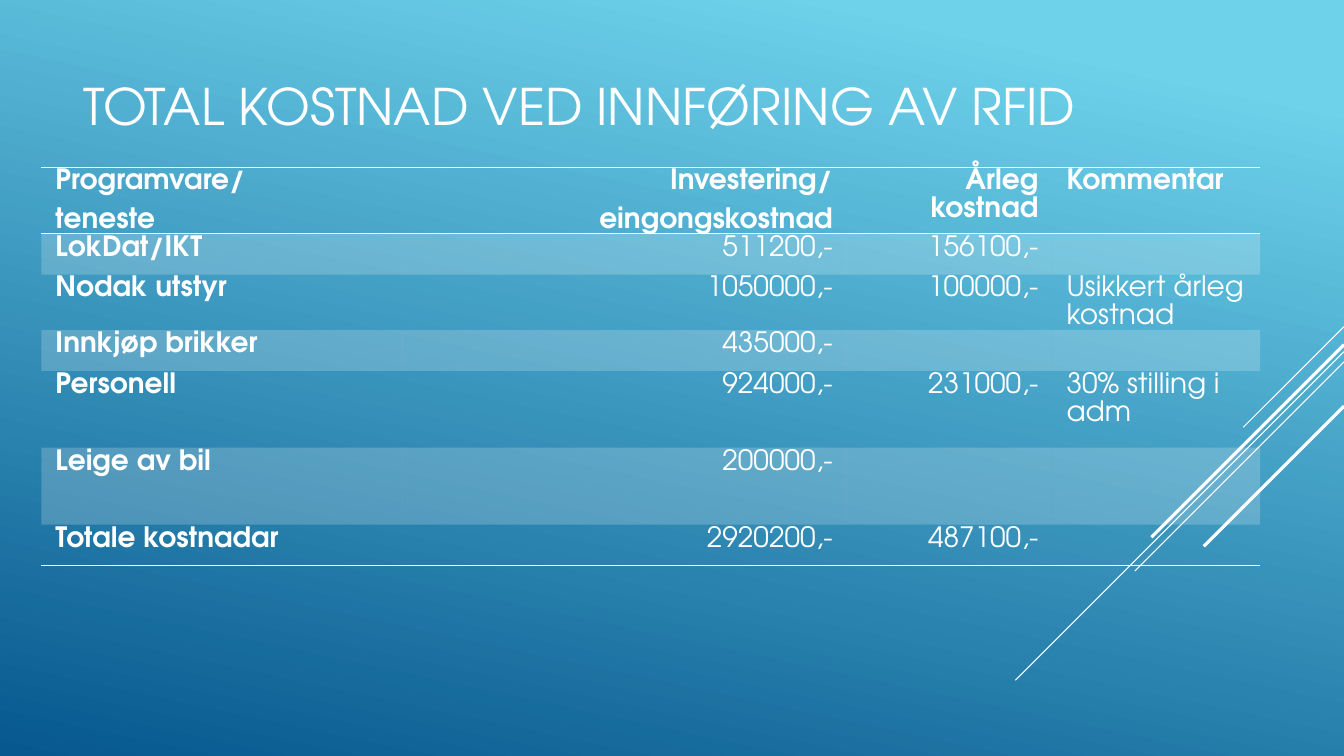
from dataclasses import dataclass

from lxml import etree
from pptx import Presentation, util as u
from pptx.dml.color import RGBColor
from pptx.dml.fill import FillFormat
from pptx.enum import shapes, text
from pptx.oxml.ns import qn
from pptx.slide import Slide
from pptx.table import _Cell as Cell

WIDTH, HEIGHT = u.Inches(13.33), u.Inches(7.5)
FONT = "TeX Gyre Adventor"
WHITE = RGBColor(0xFF, 0xFF, 0xFF)
SKY = RGBColor(0x6E, 0xD2, 0xEB)
OCEAN = RGBColor(0x06, 0x58, 0x8E)
NO_STYLE = "{2D5ABB26-0587-4C30-8999-92F81FD0307C}"
BAND_OPACITY = 20
BORDER = u.Pt(1)


@dataclass
class Stripe:
    start: float
    run: float
    weight: float


@dataclass
class Column:
    width: float
    alignment: text.PP_ALIGN


@dataclass
class CostRow:
    height: float
    texts: tuple[str, str, str, str]


STRIPES = [
    Stripe(43.2, 7.5, 0.75),
    Stripe(46.53, 24.45, 0.75),
    Stripe(47.87, 15.56, 0.75),
    Stripe(45.6, 14.33, 2.25),
    Stripe(53.73, 10.43, 2.25),
]
COLUMNS = [
    Column(26.85, text.PP_ALIGN.LEFT),
    Column(33.08, text.PP_ALIGN.RIGHT),
    Column(15.3, text.PP_ALIGN.RIGHT),
    Column(15.45, text.PP_ALIGN.LEFT),
]
LOW, TALL = 5.38, 10.17
ROWS = [
    CostRow(LOW, ("Programvare/\nteneste", "Investering/\neingongskostnad", "Årleg kostnad", "Kommentar")),
    CostRow(LOW, ("LokDat/IKT", "511200,-", "156100,-", "")),
    CostRow(LOW, ("Nodak utstyr", "1050000,-", "100000,-", "Usikkert årleg kostnad")),
    CostRow(LOW, ("Innkjøp brikker", "435000,-", "", "")),
    CostRow(TALL, ("Personell", "924000,-", "231000,-", "30% stilling i adm")),
    CostRow(TALL, ("Leige av bil", "200000,-", "", "")),
    CostRow(LOW, ("Totale kostnadar", "2920200,-", "487100,-", "")),
]


def across(percent: float) -> int:
    return round(WIDTH * percent / 100)


def down(percent: float) -> int:
    return round(HEIGHT * percent / 100)


def set_gradient(fill: FillFormat, first_stop: float) -> None:
    fill.gradient()
    fill.gradient_angle = 360 - 102
    for stop, position, color in zip(fill.gradient_stops, (first_stop, 1), (SKY, OCEAN)):
        stop.position = position
        stop.color.rgb = color


def draw_background(slide: Slide) -> None:
    set_gradient(slide.background.fill, 0)
    linear = next(slide.background.fill._xPr.iter(qn("a:lin")))
    radial = etree.Element(qn("a:path"), {"path": "circle"})
    etree.SubElement(radial, qn("a:fillToRect"), {"b": "100000"})
    linear.getparent().replace(linear, radial)

    backdrop = slide.shapes.add_shape(shapes.MSO_SHAPE.RECTANGLE, 0, 0, WIDTH, HEIGHT)
    backdrop.shadow.inherit = False
    set_gradient(backdrop.fill, 0.1)
    backdrop.line.fill.background()
    slide.shapes.title.element.addprevious(backdrop.element)


def draw_title(slide: Slide, wording: str) -> None:
    title = slide.shapes.title
    title.left, title.top = across(5.48), down(2.93)
    title.width, title.height = across(85.88), down(22)
    frame = title.text_frame
    frame.text = wording
    frame.word_wrap = True
    frame.vertical_anchor = text.MSO_ANCHOR.MIDDLE
    paragraph = frame.paragraphs[0]
    paragraph.alignment = text.PP_ALIGN.LEFT
    font = paragraph.runs[0].font
    font.name, font.size, font.color.rgb = FONT, u.Pt(36), WHITE


def draw_stripes(slide: Slide) -> None:
    group = slide.shapes.add_group_shape()
    for stripe in STRIPES:
        run, top = across(stripe.run), down(stripe.start)
        line = group.shapes.add_connector(
            shapes.MSO_CONNECTOR.STRAIGHT, WIDTH, top, WIDTH - run, top + run
        )
        line.line.color.rgb = WHITE
        line.line.width = u.Pt(stripe.weight)
        etree.SubElement(line.element.spPr, qn("a:effectLst"))


def add_border(cell: Cell, side: str) -> None:
    border = etree.Element(qn(f"a:{side}"), {"w": str(BORDER)})
    fill = etree.SubElement(border, qn("a:solidFill"))
    etree.SubElement(fill, qn("a:srgbClr"), {"val": str(WHITE)})
    cell._tc.get_or_add_tcPr().insert(0, border)


def fill_cell(cell: Cell, banded: bool) -> None:
    if not banded:
        cell.fill.background()
        return
    cell.fill.solid()
    cell.fill.fore_color.rgb = WHITE
    color = next(cell._tc.tcPr.iter(qn("a:srgbClr")))
    etree.SubElement(color, qn("a:alpha"), {"val": str(BAND_OPACITY * 1000)})


def write_cell(cell: Cell, wording: str, alignment: text.PP_ALIGN, bold: bool) -> None:
    cell.margin_left = cell.margin_right = u.Inches(0.14)
    cell.margin_top = cell.margin_bottom = 0
    cell.text_frame.text = wording
    for paragraph in cell.text_frame.paragraphs:
        paragraph.alignment = alignment
        paragraph.line_spacing = 1.07
        paragraph.space_after = u.Pt(8)
        for run in paragraph.runs:
            font = run.font
            font.name, font.size, font.bold = FONT, u.Pt(20), bold
            font.color.rgb = WHITE


def draw_cost_table(slide: Slide) -> None:
    frame = slide.shapes.add_table(
        len(ROWS), len(COLUMNS), across(3.08), down(22.13),
        across(sum(column.width for column in COLUMNS)),
        down(sum(row.height for row in ROWS)),
    )
    table = frame.table
    table.first_row = table.horz_banding = False
    next(frame.element.iter(qn("a:tableStyleId"))).text = NO_STYLE
    for index, column in enumerate(COLUMNS):
        table.columns[index].width = across(column.width)
    for row_index, row in enumerate(ROWS):
        table.rows[row_index].height = down(row.height)
        is_header = row_index == 0
        for column_index, wording in enumerate(row.texts):
            cell = table.cell(row_index, column_index)
            write_cell(cell, wording, COLUMNS[column_index].alignment, is_header or column_index == 0)
            fill_cell(cell, row_index % 2 == 1)
            if is_header or row_index == len(ROWS) - 1:
                add_border(cell, "lnB")
            if is_header:
                add_border(cell, "lnT")


def main() -> None:
    presentation = Presentation()
    presentation.slide_width, presentation.slide_height = WIDTH, HEIGHT
    slide = presentation.slides.add_slide(presentation.slide_layouts[5])
    draw_background(slide)
    draw_title(slide, "TOTAL KOSTNAD VED INNFØRING AV RFID")
    draw_stripes(slide)
    draw_cost_table(slide)
    presentation.save("out.pptx")


if __name__ == "__main__":
    main()
